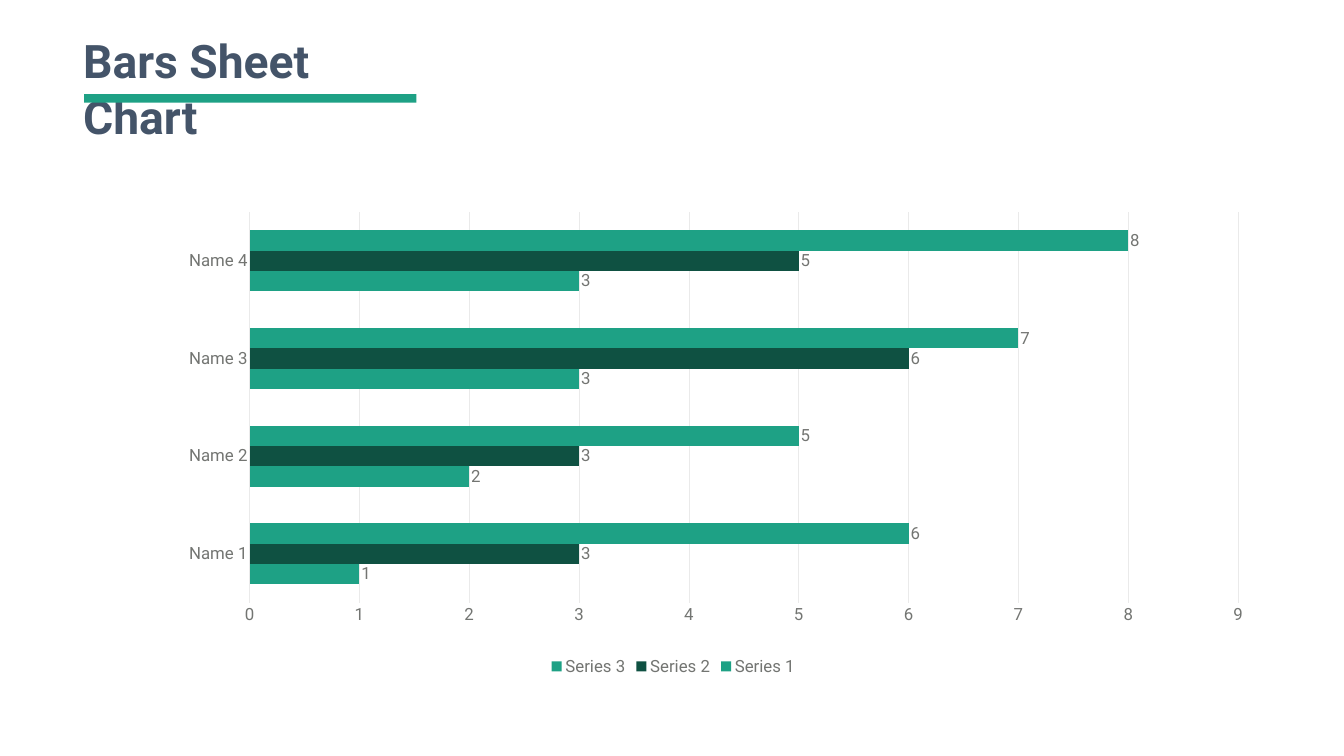
from dataclasses import dataclass

from lxml.etree import SubElement
from pptx import Presentation
from pptx.chart.data import CategoryChartData
from pptx.dml.color import RGBColor as RGB
from pptx.enum.chart import XL_CHART_TYPE as CT, XL_LABEL_POSITION as LP
from pptx.enum.chart import XL_LEGEND_POSITION as LEG, XL_TICK_MARK as TICK
from pptx.enum.shapes import MSO_SHAPE as SHAPE
from pptx.oxml.ns import qn
from pptx.util import Cm, Pt


@dataclass(frozen=True)
class Theme:
    font: str = "Roboto"
    title: RGB = RGB(0x44, 0x54, 0x69)
    text: RGB = RGB(0x73, 0x75, 0x72)
    grid: RGB = RGB(0xEA, 0xEA, 0xEA)
    green: RGB = RGB(0x1E, 0xA1, 0x85)
    dark: RGB = RGB(0x0F, 0x51, 0x42)
    title_size: int = 66
    chart_size: int = 24
    line_width: float = 0.75


class Deck:
    def __init__(self, prs, theme):
        self.theme = theme
        self.slide = prs.slides.add_slide(prs.slide_layouts[6])

    def style(self, font, size, color, bold=False):
        font.name, font.size, font.bold = self.theme.font, Pt(size), bold
        font.color.rgb = color

    def title(self, text, box):
        tf = self.slide.shapes.add_textbox(*map(Cm, box)).text_frame
        tf.word_wrap = True
        p = tf.paragraphs[0]
        p.text = text
        self.style(p.font, self.theme.title_size, self.theme.title, bold=True)

    def rule(self, box):
        sp = self.slide.shapes.add_shape(SHAPE.RECTANGLE, *map(Cm, box))
        sp.shadow.inherit = False
        sp.fill.solid()
        sp.fill.fore_color.rgb = self.theme.green
        sp.line.fill.background()

    def grid_line(self, line):
        line.color.rgb = self.theme.grid
        line.width = Pt(self.theme.line_width)

    def plot_layout(self, chart, **place):
        area = chart._chartSpace.find(".//" + qn("c:plotArea"))
        for old in area.findall(qn("c:layout")):
            area.remove(old)
        layout = SubElement(area, qn("c:layout"))
        area.insert(0, layout)
        manual = SubElement(layout, qn("c:manualLayout"))
        modes = dict(layoutTarget="inner", xMode="edge", yMode="edge")
        for tag, val in (modes | place).items():
            SubElement(manual, qn("c:" + tag)).set("val", str(val))

    def bar_chart(self, categories, series, box):
        t = self.theme
        data = CategoryChartData()
        data.categories = categories
        for name, values, _ in series:
            data.add_series(name, values)
        chart = self.slide.shapes.add_chart(
            CT.BAR_CLUSTERED, *map(Cm, box), data).chart
        self.style(chart.font, t.chart_size, t.text)
        chart.has_title = False
        chart.has_legend = True
        chart.legend.position = LEG.BOTTOM
        chart.legend.include_in_layout = False
        self.style(chart.legend.font, t.chart_size, t.text)

        cat, val = chart.category_axis, chart.value_axis
        for axis in (cat, val):
            axis.major_tick_mark = axis.minor_tick_mark = TICK.NONE
            self.style(axis.tick_labels.font, t.chart_size, t.text)
        cat.has_major_gridlines = False
        self.grid_line(cat.format.line)
        val.minimum_scale, val.maximum_scale, val.major_unit = 0, 9, 1
        val.format.line.fill.background()
        self.grid_line(val.major_gridlines.format.line)

        plot = chart.plots[0]
        plot.vary_by_categories = False
        plot.gap_width, plot.overlap = 182, 0
        for s, (_, _, color) in zip(plot.series, series):
            s.format.fill.solid()
            s.format.fill.fore_color.rgb = color
            labels = s.data_labels
            labels.show_value = True
            labels.position = LP.OUTSIDE_END
            self.style(labels.font, t.chart_size, t.text)
        self.plot_layout(chart, x=0.14, y=0.03, w=0.84, h=0.81)


def main():
    prs = Presentation()
    prs.slide_width, prs.slide_height = Cm(67.72), Cm(38.1)
    theme = Theme()
    deck = Deck(prs, theme)
    deck.bar_chart(
        [f"Name {i}" for i in range(1, 5)],
        [("Series 1", (1, 2, 3, 3), theme.green),
         ("Series 2", (3, 3, 6, 5), theme.dark),
         ("Series 3", (6, 5, 7, 8), theme.green)],
        (4.27, 9.96, 59.3, 24.3))
    deck.title("Bars Sheet Chart", (3.94, 1.52, 17.35, 3.07))
    deck.rule((4.24, 4.75, 16.74, 0.43))
    prs.save("out.pptx")


if __name__ == "__main__":
    main()
